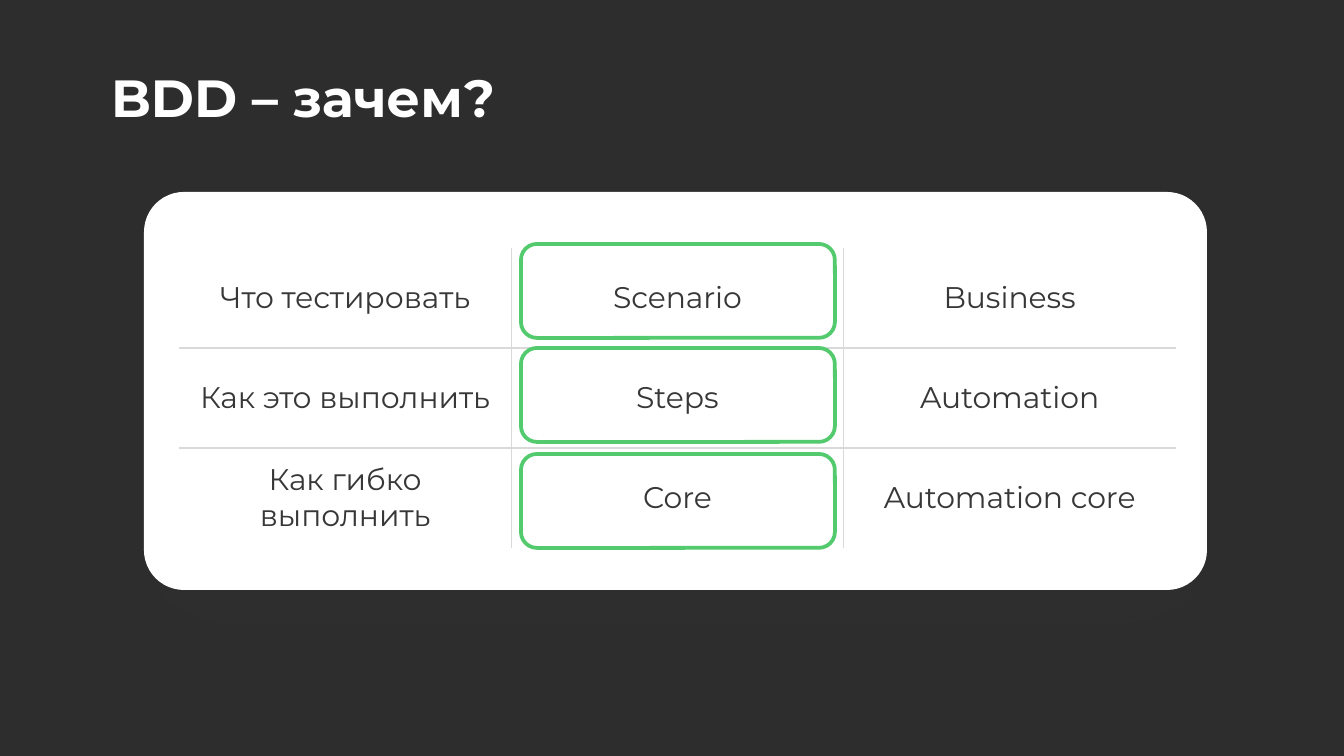
from lxml import etree
from pptx import Presentation
from pptx.dml.color import RGBColor
from pptx.enum.shapes import MSO_SHAPE
from pptx.enum.text import MSO_ANCHOR, PP_ALIGN
from pptx.oxml.ns import qn
from pptx.util import Emu, Pt

PX = 914400 / 134.4
FONT = "Montserrat"
DARK, WHITE, INK, GRID, GREEN = "2D2D2D", "FFFFFF", "373737", "D9D9D9", "53CA6D"
ROWS = [
    ("Что тестировать", "Scenario", "Business"),
    ("Как это выполнить", "Steps", "Automation"),
    ("Как гибко выполнить", "Core", "Automation core"),
]


def px(n):
    return Emu(round(n * PX))


def rgb(value):
    return RGBColor.from_string(value)


def style(font, size, color, bold=False):
    for name, value in {"name": FONT, "size": Pt(size), "bold": bold}.items():
        setattr(font, name, value)
    font.color.rgb = rgb(color)


def add_color(parent, color, alpha=None):
    clr = etree.SubElement(parent, qn("a:srgbClr"), val=color)
    if alpha:
        etree.SubElement(clr, qn("a:alpha"), val=str(alpha * 1000))


def add_title(s, text, box):
    sp = s.shapes.title
    sp.left, sp.top, sp.width, sp.height = map(px, box)
    tf = sp.text_frame
    tf.vertical_anchor = MSO_ANCHOR.BOTTOM
    for side in ("left", "top", "right", "bottom"):
        setattr(tf, f"margin_{side}", px(13))
    p = tf.paragraphs[0]
    p.alignment = PP_ALIGN.LEFT
    r = p.add_run()
    r.text = text
    style(r.font, 28, WHITE, bold=True)


def add_round_rect(s, box, radius):
    """Add a rounded rectangle whose corner radius is given in px."""
    sp = s.shapes.add_shape(MSO_SHAPE.ROUNDED_RECTANGLE, *map(px, box))
    sp.adjustments[0] = radius / min(box[2:])
    sp.shadow.inherit = False
    return sp


def add_card(s, box):
    sp = add_round_rect(s, box, 40)
    sp.fill.solid()
    sp.fill.fore_color.rgb = rgb(WHITE)
    sp.line.fill.background()
    effects = sp._element.spPr.find(qn("a:effectLst"))
    shadow = etree.SubElement(
        effects, qn("a:outerShdw"), blurRad=str(Pt(50)), dist=str(Pt(19)),
        dir="5400000", algn="t", rotWithShape="0")
    add_color(shadow, INK, alpha=21)


def set_border(cell, side, visible):
    ln = etree.SubElement(cell._tc.get_or_add_tcPr(), qn(f"a:ln{side}"), w=str(Pt(1)))
    if visible:
        add_color(etree.SubElement(ln, qn("a:solidFill")), GRID)
    else:
        etree.SubElement(ln, qn("a:noFill"))


def add_grid(s, rows, box):
    """Add a table with inner rules only."""
    n_rows, n_cols = len(rows), len(rows[0])
    table = s.shapes.add_table(n_rows, n_cols, *map(px, box)).table
    table.first_row = table.horz_banding = False
    for i, row in enumerate(rows):
        for j, text in enumerate(row):
            cell = table.cell(i, j)
            inner = {"L": j > 0, "R": j < n_cols - 1, "T": i > 0, "B": i < n_rows - 1}
            for side, visible in inner.items():
                set_border(cell, side, visible)
            cell.fill.background()
            cell.vertical_anchor = MSO_ANCHOR.MIDDLE
            p = cell.text_frame.paragraphs[0]
            p.alignment = PP_ALIGN.CENTER
            r = p.add_run()
            r.text = text
            style(r.font, 16, INK)


def add_frames(s, box):
    """Outline the middle column of the grid that fills the box."""
    x, y, w, h = box
    for offset in (-4, 100, 206):
        sp = add_round_rect(s, (x + w // 3 + 10, y + offset, 314, 94), 16)
        sp.fill.background()
        sp.line.color.rgb = rgb(GREEN)
        sp.line.width = Pt(2)


def add_layers(s, box):
    x, y, w, h = box
    grid = (x + 35, y + 56, w - 66, h - 98)
    add_card(s, box)
    add_grid(s, ROWS, grid)
    add_frames(s, grid)


def main():
    prs = Presentation()
    prs.slide_width, prs.slide_height = px(1344), px(756)
    s = prs.slides.add_slide(prs.slide_layouts[5])
    s.background.fill.solid()
    s.background.fill.fore_color.rgb = rgb(DARK)
    add_title(s, "BDD – зачем?", (98, 48, 1160, 93))
    add_layers(s, (144, 192, 1063, 398))
    prs.save("out.pptx")


if __name__ == "__main__":
    main()
